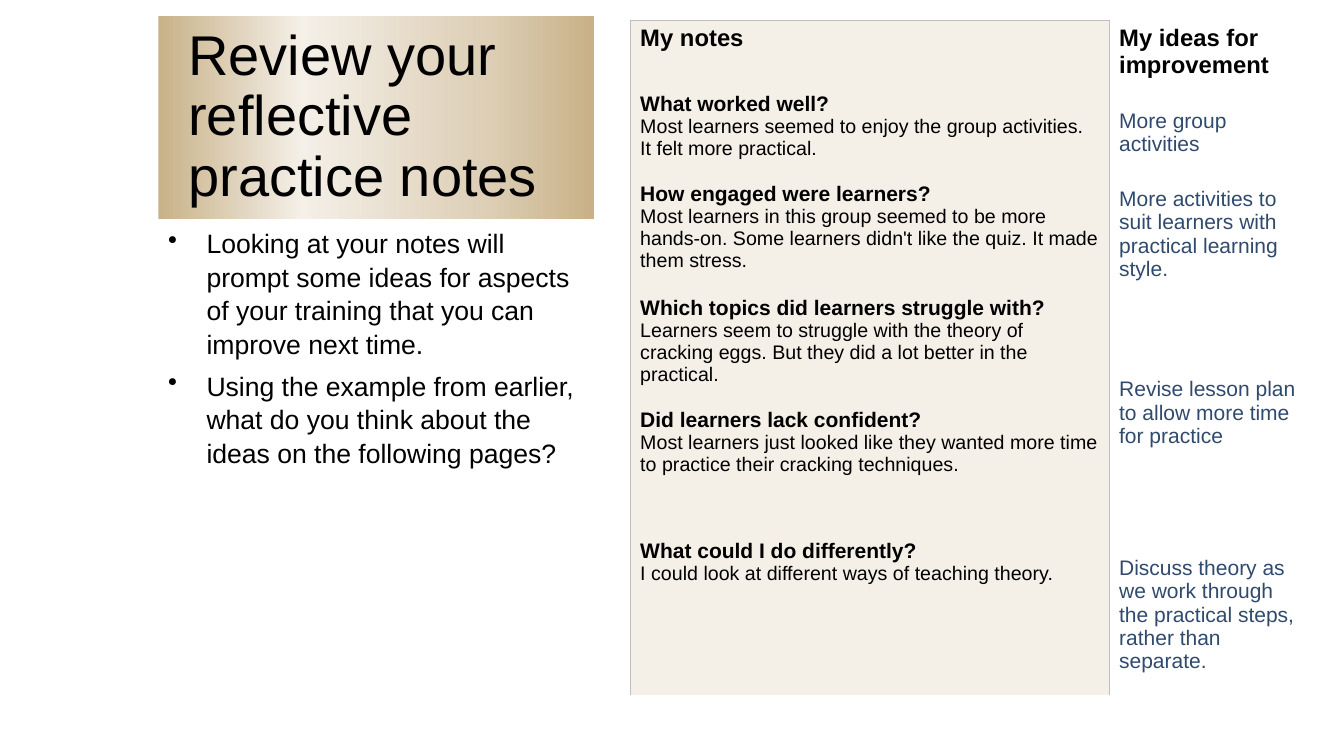
from lxml import etree
from pptx import Presentation
from pptx.dml.color import RGBColor
from pptx.enum.shapes import MSO_SHAPE
from pptx.enum.text import MSO_ANCHOR, PP_ALIGN
from pptx.oxml.ns import qn
from pptx.util import Inches, Pt

RECT = MSO_SHAPE.RECTANGLE
TOP, MIDDLE = MSO_ANCHOR.TOP, MSO_ANCHOR.MIDDLE
LEFT = PP_ALIGN.LEFT

BLACK = RGBColor(0x00, 0x00, 0x00)
NAVY = RGBColor(0x30, 0x4A, 0x6E)
CREAM = RGBColor(0xF4, 0xEF, 0xE7)
SAND = RGBColor(0xDE, 0xD0, 0xB8)
GOLD = RGBColor(0xC8, 0xB1, 0x88)
GREY = RGBColor(0xBF, 0xBF, 0xBF)


def add_text(tf, text, size, bold=False, color=BLACK, first=False,
             before=0, after=0, spacing=None, indent=0, bullet=False):
    p = tf.paragraphs[0] if first else tf.add_paragraph()
    p.alignment = LEFT
    p.space_before, p.space_after = Pt(before), Pt(after)
    if spacing:
        p.line_spacing = spacing
    pPr = p._p.get_or_add_pPr()
    if indent:
        pPr.set("marL", str(Inches(indent)))
    if bullet:
        pPr.set("indent", str(-Inches(indent)))
        etree.SubElement(pPr, qn("a:buChar")).set("char", "•")
    r = p.add_run()
    r.text = text
    r.font.name, r.font.size, r.font.bold = "Arial", Pt(size), bold
    r.font.color.rgb = color


def set_borders(cell, grey_sides):
    tcPr = cell._tc.get_or_add_tcPr()
    for side in "LRTB":
        ln = etree.SubElement(tcPr, qn("a:ln" + side))
        if side in grey_sides:
            ln.set("w", str(Pt(0.75)))
            fill = etree.SubElement(ln, qn("a:solidFill"))
            etree.SubElement(fill, qn("a:srgbClr")).set("val", str(GREY))
        else:
            etree.SubElement(ln, qn("a:noFill"))


prs = Presentation()
prs.slide_width, prs.slide_height = Inches(13.33), Inches(7.5)
s = prs.slides.add_slide(prs.slide_layouts[6])

title = s.shapes.add_shape(RECT, Inches(1.57), Inches(0.16), Inches(4.32), Inches(2.01))
title.shadow.inherit = False
title.line.fill.background()
title.fill.gradient()
title.fill.gradient_angle = 0
stops = title._element.spPr.find(qn("a:gradFill")).find(qn("a:gsLst"))
for gs in list(stops):
    stops.remove(gs)
for percent, color in [(0, GOLD), (33, CREAM), (74, SAND), (100, GOLD)]:
    gs = etree.SubElement(stops, qn("a:gs"))
    gs.set("pos", str(percent * 1000))
    etree.SubElement(gs, qn("a:srgbClr")).set("val", str(color))
tf = title.text_frame
tf.word_wrap = True
tf.vertical_anchor = MIDDLE
add_text(tf, "Review your reflective practice notes", 40, first=True, spacing=0.9, indent=0.2)

body = s.shapes.add_textbox(Inches(1.57), Inches(2.19), Inches(4.32), Inches(4.15))
tf = body.text_frame
tf.word_wrap = True
points = [
    "Looking at your notes will prompt some ideas for aspects of your training that you can improve next time.",
    "Using the example from earlier, what do you think about the ideas on the following pages?",
]
for i, point in enumerate(points):
    add_text(tf, point, 19, first=i == 0, after=6, spacing=1.05, indent=0.38, bullet=True)

rows = [
    (0.67, [], "My ideas for improvement"),
    (0.89, [("What worked well?",
             "Most learners seemed to enjoy the group activities. It felt more practical.")],
     "More group activities"),
    (1.13, [("How engaged were learners?",
             "Most learners in this group seemed to be more hands-on. "
             "Some learners didn't like the quiz. It made them stress.")],
     "More activities to suit learners with practical learning style."),
    (2.41, [("Which topics did learners struggle with?",
             "Learners seem to struggle with the theory of cracking eggs. "
             "But they did a lot better in the practical."),
            ("Did learners lack confident?",
             "Most learners just looked like they wanted more time to practice their cracking techniques.")],
     "Revise lesson plan to allow more time for practice"),
    (1.6, [("What could I do differently?",
            "I could look at different ways of teaching theory.")],
     "Discuss theory as we work through the practical steps, rather than separate."),
]
table = s.shapes.add_table(len(rows), 2, Inches(6.25), Inches(0.2), Inches(6.81), Inches(6.7)).table
table.first_row = table.horz_banding = False
table.columns[0].width, table.columns[1].width = Inches(4.75), Inches(2.06)

for i, (height, notes, idea) in enumerate(rows):
    table.rows[i].height = Inches(height)
    note_cell, idea_cell = table.cell(i, 0), table.cell(i, 1)
    header = i == 0
    set_borders(note_cell, "LRT" if header else "LR")
    set_borders(idea_cell, "L")
    note_cell.fill.solid()
    note_cell.fill.fore_color.rgb = CREAM
    idea_cell.fill.background()
    idea_cell.vertical_anchor = TOP if header else MIDDLE
    if header:
        add_text(note_cell.text_frame, "My notes", 17, bold=True, first=True)
    for j, (question, answer) in enumerate(notes):
        add_text(note_cell.text_frame, question, 15, bold=True, first=j == 0, before=16 * j)
        add_text(note_cell.text_frame, answer, 14)
    add_text(idea_cell.text_frame, idea, 17 if header else 15, bold=header,
             color=BLACK if header else NAVY, first=True)

prs.save("out.pptx")
